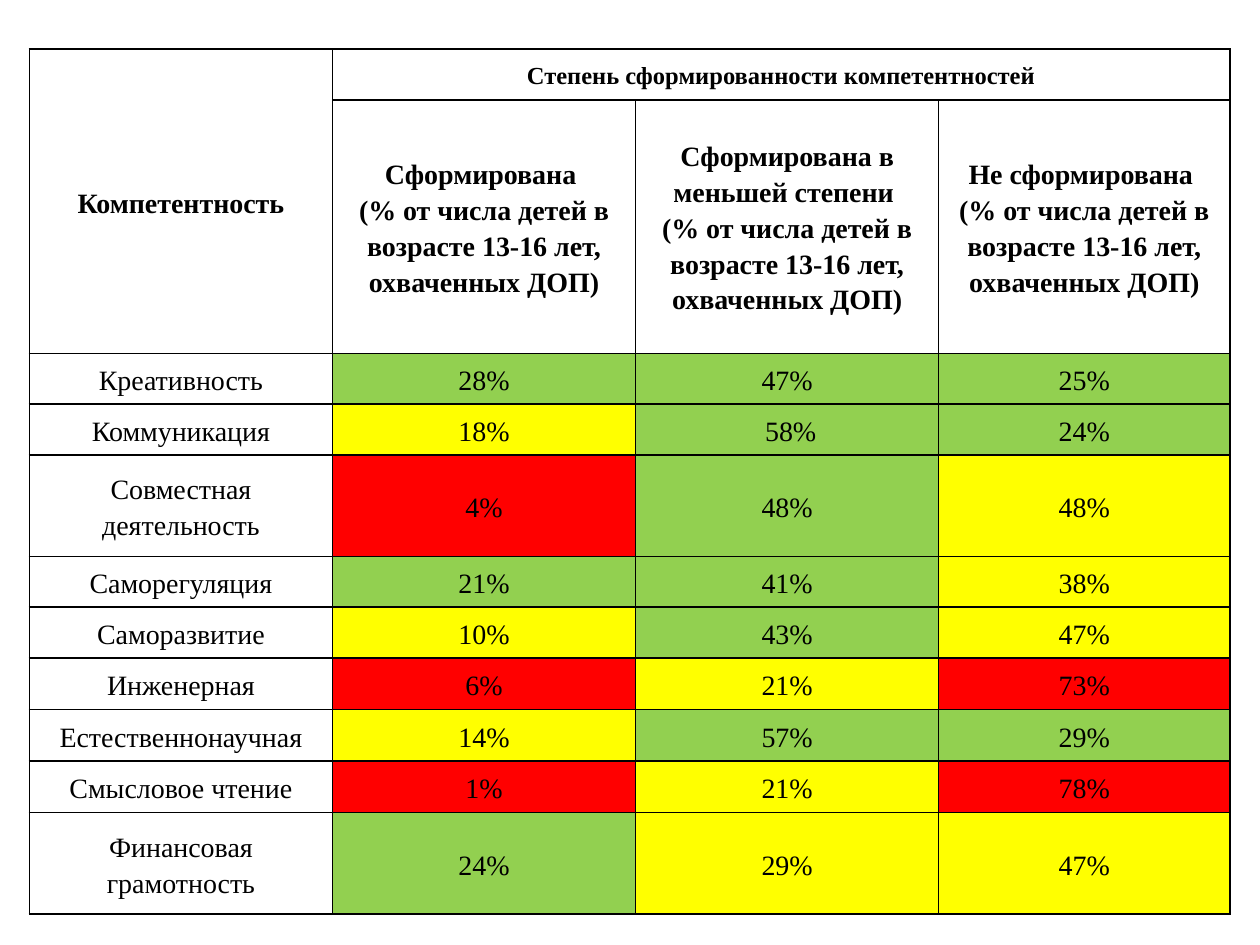
from lxml.etree import SubElement
from pptx import Presentation
from pptx.dml.color import RGBColor
from pptx.enum.text import MSO_ANCHOR, PP_ALIGN
from pptx.oxml.ns import qn
from pptx.util import Pt

GREEN, YELLOW, RED = "92D050", "FFFF00", "FF0000"
BLACK = "000000"
SHARE_NOTE = "(% от числа детей в возрасте 13-16 лет, охваченных ДОП)"

competences = [
    ("Креативность", ("28%", GREEN), ("47%", GREEN), ("25%", GREEN)),
    ("Коммуникация", ("18%", YELLOW), (" 58%", GREEN), ("24%", GREEN)),
    ("Совместная деятельность", ("4%", RED), ("48%", GREEN), ("48%", YELLOW)),
    ("Саморегуляция", ("21%", GREEN), ("41%", GREEN), ("38%", YELLOW)),
    ("Саморазвитие", ("10%", YELLOW), ("43%", GREEN), ("47%", YELLOW)),
    ("Инженерная", ("6%", RED), ("21%", YELLOW), ("73%", RED)),
    ("Естественнонаучная", ("14%", YELLOW), ("57%", GREEN), ("29%", GREEN)),
    ("Смысловое чтение", ("1%", RED), ("21%", YELLOW), ("78%", RED)),
    ("Финансовая грамотность", ("24%", GREEN), ("29%", YELLOW), ("47%", YELLOW)),
]
degrees = ["Сформирована ", "Сформирована в меньшей степени ", "Не сформирована "]
column_widths = [173.2, 173.2, 173.2, 166.4]
row_heights = [29, 145, 29, 29, 58, 29, 29, 29.5, 29.5, 29.5, 58]


def write(cell, text, size=16, bold=False, color=BLACK):
    """Fill a cell with centred text, one paragraph per line."""
    cell.text_frame.text = text
    for paragraph in cell.text_frame.paragraphs:
        paragraph.alignment = PP_ALIGN.CENTER
        paragraph.line_spacing = 1.15
        for run in paragraph.runs:
            run.font.name = "Times New Roman"
            run.font.size = Pt(size)
            run.font.bold = bold
            run.font.color.rgb = RGBColor.from_string(color)


def add_borders(cell, color=BLACK, width=1):
    properties = cell._tc.get_or_add_tcPr()
    for side in ("a:lnL", "a:lnR", "a:lnT", "a:lnB"):
        border = SubElement(properties, qn(side), w=str(Pt(width)))
        solid = SubElement(border, qn("a:solidFill"))
        SubElement(solid, qn("a:srgbClr"), val=color)


deck = Presentation()
deck.slide_width, deck.slide_height = Pt(720), Pt(540)
slide = deck.slides.add_slide(deck.slide_layouts[6])

table = slide.shapes.add_table(
    len(row_heights), len(column_widths), Pt(16.8), Pt(28),
    Pt(sum(column_widths)), Pt(sum(row_heights))).table
table.first_row = table.horz_banding = False
for column, width in zip(table.columns, column_widths):
    column.width = Pt(width)
for row, height in zip(table.rows, row_heights):
    row.height = Pt(height)

for cell in table.iter_cells():
    cell.vertical_anchor = MSO_ANCHOR.MIDDLE
    cell.margin_left = cell.margin_right = Pt(5)
    cell.margin_top = cell.margin_bottom = Pt(0)
    add_borders(cell)
    cell.fill.background()

table.cell(0, 0).merge(table.cell(1, 0))
table.cell(0, 1).merge(table.cell(0, 3))
write(table.cell(0, 0), "Компетентность", bold=True)
write(table.cell(0, 1), "Степень сформированности компетентностей", size=14, bold=True)
for column, degree in enumerate(degrees, 1):
    write(table.cell(1, column), f"{degree}\n{SHARE_NOTE}", bold=True)

for row, (competence, *shares) in enumerate(competences, 2):
    write(table.cell(row, 0), competence)
    for column, (share, level_color) in enumerate(shares, 1):
        cell = table.cell(row, column)
        write(cell, share)
        cell.fill.solid()
        cell.fill.fore_color.rgb = RGBColor.from_string(level_color)

deck.save("out.pptx")
